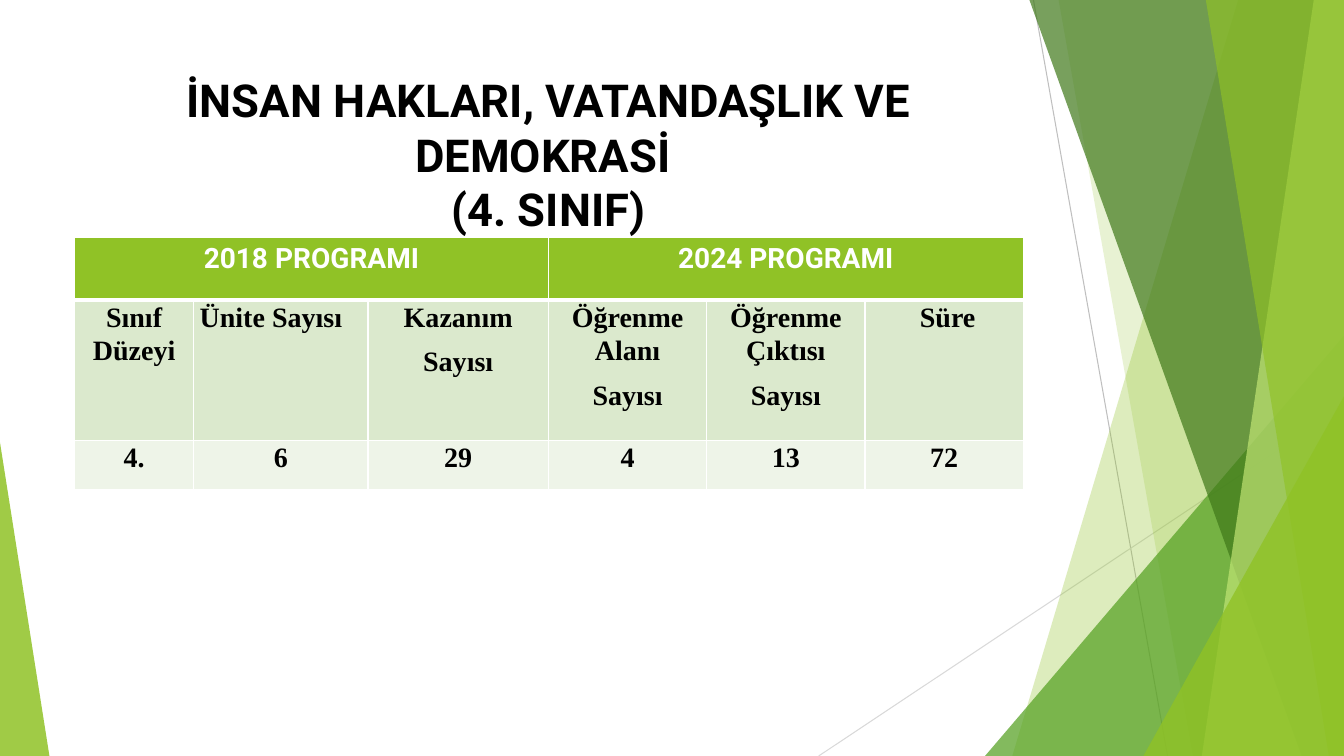
from dataclasses import dataclass

from lxml import etree
from pptx import Presentation
from pptx.dml.color import RGBColor
from pptx.enum.shapes import MSO_CONNECTOR, MSO_SHAPE
from pptx.enum.text import MSO_ANCHOR, MSO_AUTO_SIZE, PP_ALIGN
from pptx.oxml.ns import qn
from pptx.util import Inches, Pt

STRAIGHT = MSO_CONNECTOR.STRAIGHT
TRIANGLE = MSO_SHAPE.ISOSCELES_TRIANGLE
TOP = MSO_ANCHOR.TOP
FIXED_SIZE = MSO_AUTO_SIZE.NONE
LEFT, CENTER = PP_ALIGN.LEFT, PP_ALIGN.CENTER


@dataclass(frozen=True)
class Theme:
    white: str = "FFFFFF"
    black: str = "000000"
    lime: str = "90C226"
    pale_lime: str = "C0E474"
    green: str = "54A021"
    forest: str = "3F7819"
    gray: str = "BFBFBF"
    light_gray: str = "D9D9D9"
    label_row: str = "DBE9CD"
    value_row: str = "EEF4E8"
    heading_font: str = "Roboto"
    table_font: str = "Times New Roman"
    title_size: float = 32.4
    table_size: float = 20


@dataclass(frozen=True)
class Box:
    left: float
    top: float
    width: float
    height: float

    @property
    def right(self):
        return self.left + self.width

    @property
    def bottom(self):
        return self.top + self.height


THEME = Theme()
SLIDE = Box(0, 0, 13.33, 7.5)
COLUMN_WIDTHS = [1.18, 1.73, 1.79, 1.57, 1.57, 1.57]
ROW_HEIGHTS = [0.62, 1.39, 0.49]
PROGRAMS = ["2018 PROGRAMI", "2024 PROGRAMI"]
LABELS = [
    ["Sınıf Düzeyi"],
    ["Ünite Sayısı"],
    ["Kazanım", "Sayısı"],
    ["Öğrenme Alanı", "Sayısı"],
    ["Öğrenme Çıktısı", "Sayısı"],
    [" Süre"],
]
VALUES = [["4."], ["6"], ["29"], ["4"], ["13"], ["72"]]


def paint(shape, color, opacity):
    shape.shadow.inherit = False
    shape.fill.solid()
    shape.fill.fore_color.rgb = RGBColor.from_string(color)
    for element in shape._element.spPr.iter(qn("a:srgbClr")):
        etree.SubElement(element, qn("a:alpha"), val=str(opacity * 1000))
    shape.line.fill.background()


def add_line(slide, start, end, color):
    points = [Inches(value) for value in (*start, *end)]
    connector = slide.shapes.add_connector(STRAIGHT, *points)
    connector.line.color.rgb = RGBColor.from_string(color)
    connector.line.width = Pt(0.75)
    etree.SubElement(connector._element.spPr, qn("a:effectLst"))


def add_facet(slide, box, top_inset, bottom_inset, color, opacity):
    corners = [
        (box.right - top_inset, box.top),
        (box.right, box.top),
        (box.right, box.bottom),
        (box.right - bottom_inset, box.bottom),
    ]
    points = [(Inches(x), Inches(y)) for x, y in corners]
    builder = slide.shapes.build_freeform(*points[0])
    builder.add_line_segments(points[1:], close=True)
    paint(builder.convert_to_shape(), color, opacity)


def add_corner(slide, box, apex, color, opacity):
    shape = slide.shapes.add_shape(
        TRIANGLE, Inches(box.left), Inches(box.top), Inches(box.width), Inches(box.height)
    )
    shape.adjustments[0] = apex
    paint(shape, color, opacity)


def add_right_corner(slide, box, width, height, color, opacity):
    corner = Box(box.right - width, box.bottom - height, width, height)
    add_corner(slide, corner, 1, color, opacity)


def add_decoration(slide, box):
    right, bottom = box.right, box.bottom
    add_line(slide, (right - 3.08, box.top), (right - 1.75, bottom), THEME.gray)
    add_line(slide, (right, bottom - 3.47), (right - 5.21, bottom), THEME.light_gray)
    layers = [
        (add_facet, 1.05, 3.29, THEME.lime, 30),
        (add_facet, 2.83, 1.5, THEME.lime, 20),
        (add_right_corner, 3.56, 4.17, THEME.green, 72),
        (add_facet, 3.12, 0.42, THEME.forest, 70),
        (add_facet, 0.3, 1.41, THEME.pale_lime, 70),
        (add_facet, 1.37, 0.15, THEME.lime, 65),
        (add_right_corner, 1.99, 3.57, THEME.lime, 80),
    ]
    for draw, *settings in layers:
        draw(slide, box, *settings)
    add_corner(slide, Box(box.left, bottom - 3.11, 0.49, 3.11), 0, THEME.lime, 85)


def add_run(paragraph, text, size, font, color):
    run = paragraph.add_run()
    run.text = text
    run.font.size = Pt(size)
    run.font.name = font
    run.font.bold = True
    run.font.color.rgb = RGBColor.from_string(color)


def add_title(slide, box):
    title = slide.shapes.title
    title.left, title.top = Inches(box.left), Inches(box.top)
    title.width, title.height = Inches(box.width), Inches(box.height)
    frame = title.text_frame
    frame.word_wrap = True
    frame.auto_size = FIXED_SIZE
    frame.vertical_anchor = TOP
    paragraph = frame.paragraphs[0]
    paragraph.alignment = CENTER
    style = (THEME.title_size, THEME.heading_font, THEME.black)
    add_run(paragraph, "İNSAN HAKLARI, VATANDAŞLIK VE DEMOKRASİ ", *style)
    paragraph.add_line_break()
    add_run(paragraph, "(4. SINIF)", *style)


def style_cell(cell, color, margins, top_width, bottom_width):
    cell.margin_left = cell.margin_right = Inches(margins[0])
    cell.margin_top = cell.margin_bottom = Inches(margins[1])
    cell.fill.solid()
    cell.fill.fore_color.rgb = RGBColor.from_string(color)
    properties = cell._tc.get_or_add_tcPr()
    borders = [("a:lnL", 1), ("a:lnR", 1), ("a:lnT", top_width), ("a:lnB", bottom_width)]
    for index, (tag, width) in enumerate(borders):
        border = etree.Element(qn(tag), w=str(Pt(width)))
        fill = etree.SubElement(border, qn("a:solidFill"))
        etree.SubElement(fill, qn("a:srgbClr"), val=THEME.white)
        properties.insert(index, border)


def fill_body_cell(cell, lines, alignment):
    for index, line in enumerate(lines):
        frame = cell.text_frame
        paragraph = frame.add_paragraph() if index else frame.paragraphs[0]
        paragraph.alignment = alignment
        paragraph.line_spacing = 1.07
        paragraph.space_after = Pt(8)
        add_run(paragraph, line, THEME.table_size, THEME.table_font, THEME.black)


def add_program_table(slide, box):
    table = slide.shapes.add_table(
        len(ROW_HEIGHTS), len(COLUMN_WIDTHS),
        Inches(box.left), Inches(box.top), Inches(box.width), Inches(box.height),
    ).table
    for column, width in zip(table.columns, COLUMN_WIDTHS):
        column.width = Inches(width)
    for row, height in zip(table.rows, ROW_HEIGHTS):
        row.height = Inches(height)
    for cell in table.rows[0].cells:
        style_cell(cell, THEME.lime, (0.08, 0.05), 1, 3)
    for index, program in enumerate(PROGRAMS):
        heading = table.cell(0, 3 * index)
        heading.merge(table.cell(0, 3 * index + 2))
        paragraph = heading.text_frame.paragraphs[0]
        paragraph.alignment = CENTER
        add_run(paragraph, program, THEME.table_size, THEME.heading_font, THEME.white)
    body_rows = [(LABELS, THEME.label_row, 3), (VALUES, THEME.value_row, 1)]
    for row_index, (texts, color, top_width) in enumerate(body_rows, 1):
        for column_index, lines in enumerate(texts):
            cell = table.cell(row_index, column_index)
            style_cell(cell, color, (0.06, 0), top_width, 1)
            fill_body_cell(cell, lines, LEFT if lines == ["Ünite Sayısı"] else CENTER)


def main():
    presentation = Presentation()
    presentation.slide_width = Inches(SLIDE.width)
    presentation.slide_height = Inches(SLIDE.height)
    slide = presentation.slides.add_slide(presentation.slide_layouts[5])
    add_decoration(slide, SLIDE)
    add_title(slide, Box(0.74, 0.67, 9.4, 1.44))
    add_program_table(slide, Box(0.74, 2.36, sum(COLUMN_WIDTHS), sum(ROW_HEIGHTS)))
    presentation.save("out.pptx")


if __name__ == "__main__":
    main()
